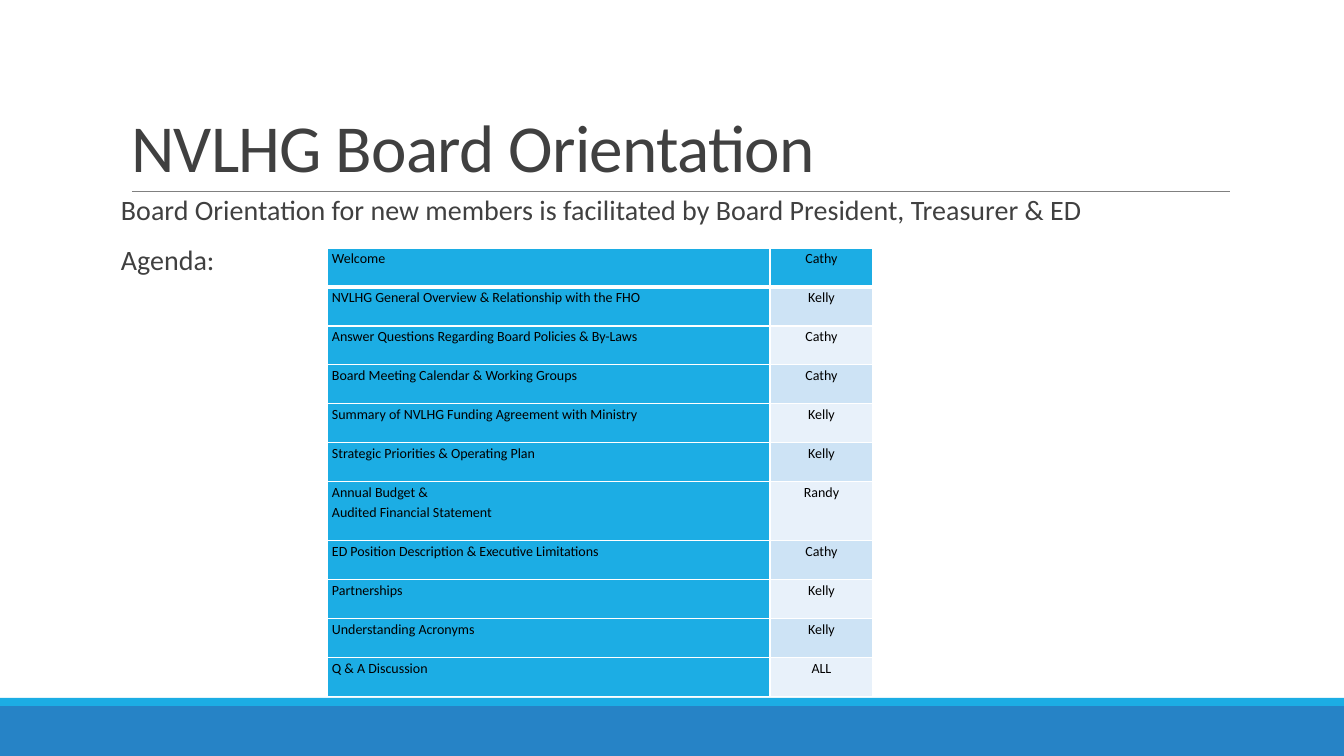
import lxml.etree
import pptx
import pptx.dml.color
import pptx.enum.shapes
import pptx.enum.text
import pptx.oxml.ns
import pptx.util

ALIGN = pptx.enum.text.PP_ALIGN
ANCHOR = pptx.enum.text.MSO_ANCHOR
qn = pptx.oxml.ns.qn

EMU_PER_PX = 914400 / 100.8
WIDTH, HEIGHT = 1344, 756
BRIGHT_BLUE, GREY_TEXT = "1CADE4", "404040"


def px(*lengths):
    """Turn pixel lengths into a list of EMU lengths."""
    return [pptx.util.Emu(round(length * EMU_PER_PX)) for length in lengths]


def color(hex_code):
    return pptx.dml.color.RGBColor.from_string(hex_code)


deck = pptx.Presentation()
deck.slide_width, deck.slide_height = px(WIDTH, HEIGHT)
slide = deck.slides.add_slide(deck.slide_layouts[1])

# Footer bands and the rule under the title
for top, height, fill in [(706, 50, "2683C6"), (698, 8, BRIGHT_BLUE)]:
    band = slide.shapes.add_shape(
        pptx.enum.shapes.MSO_SHAPE.RECTANGLE, *px(0, top, WIDTH, height))
    band.shadow.inherit = False
    band.fill.solid()
    band.fill.fore_color.rgb = color(fill)
    band.line.fill.background()

title_rule = slide.shapes.add_connector(
    pptx.enum.shapes.MSO_CONNECTOR.STRAIGHT, *px(132, 191, 1230, 191))
title_rule.line.color.rgb = color("808080")
title_rule.line.width = pptx.util.Pt(0.5)
lxml.etree.SubElement(title_rule._element.spPr, qn("a:effectLst"))

# Title and introduction
title, intro = slide.shapes.title, slide.placeholders[1]
placeholders = [
    (title, (121, 31, 1109, 160), ["NVLHG Board Orientation"], 48,
     {"vertical_anchor": ANCHOR.BOTTOM},
     {"line_spacing": 0.85}),
    (intro, (121, 191, 1109, 497),
     ["Board Orientation for new members is facilitated by Board President, Treasurer & ED",
      "Agenda:"], 20,
     {"vertical_anchor": ANCHOR.TOP, "margin_left": 0, "margin_right": 0},
     {"line_spacing": 0.9, "space_before": pptx.util.Pt(12),
      "space_after": pptx.util.Pt(2)}),
]
for placeholder, box, lines, size, frame_format, paragraph_format in placeholders:
    placeholder.left, placeholder.top, placeholder.width, placeholder.height = px(*box)
    frame = placeholder.text_frame
    frame.text = "\n".join(lines)
    frame.word_wrap = True
    frame.auto_size = pptx.enum.text.MSO_AUTO_SIZE.NONE
    for attribute, value in frame_format.items():
        setattr(frame, attribute, value)
    for paragraph in frame.paragraphs:
        paragraph.alignment = ALIGN.LEFT
        for attribute, value in paragraph_format.items():
            setattr(paragraph, attribute, value)
        font = paragraph.runs[0].font
        font.name, font.size = "Calibri", pptx.util.Pt(size)
        font.color.rgb = color(GREY_TEXT)

title.text_frame.paragraphs[0].runs[0].font._element.set("spc", "-50")
for paragraph in intro.text_frame.paragraphs:
    properties = paragraph._p.get_or_add_pPr()
    properties.set("marL", "0")
    properties.set("indent", "0")
    lxml.etree.SubElement(properties, qn("a:buNone"))

# Agenda table
agenda = [
    ("Welcome", "Cathy"),
    ("NVLHG General Overview & Relationship with the FHO", "Kelly"),
    ("Answer Questions Regarding Board Policies & By-Laws", "Cathy"),
    ("Board Meeting Calendar & Working Groups", "Cathy"),
    ("Summary of NVLHG Funding Agreement with Ministry", "Kelly"),
    ("Strategic Priorities & Operating Plan", "Kelly"),
    ("Annual Budget &\nAudited Financial Statement", "Randy"),
    ("ED Position Description & Executive Limitations", "Cathy"),
    ("Partnerships", "Kelly"),
    ("Understanding Acronyms", "Kelly"),
    ("Q & A Discussion", "ALL"),
]
row_heights = [39 + 20 * topic.count("\n") for topic, _ in agenda]
column_widths = [443, 103]
table = slide.shapes.add_table(
    len(agenda), 2, *px(327, 248, sum(column_widths), sum(row_heights))).table
table.first_row = table.horz_banding = False
for column, width in zip(table.columns, px(*column_widths)):
    column.width = width
for row, height in zip(table.rows, px(*row_heights)):
    row.height = height

margin_side, = px(5)
cell_format = {"margin_left": margin_side, "margin_right": margin_side,
               "margin_top": 0, "margin_bottom": 0, "vertical_anchor": ANCHOR.TOP}
for row, entry in enumerate(agenda):
    presenter_fill = BRIGHT_BLUE if row == 0 else ("E8F1FA", "CDE3F5")[row % 2]
    styles = [(BRIGHT_BLUE, ALIGN.LEFT), (presenter_fill, ALIGN.CENTER)]
    for column, (text, (fill, alignment)) in enumerate(zip(entry, styles)):
        cell = table.cell(row, column)
        cell.text = text
        for attribute, value in cell_format.items():
            setattr(cell, attribute, value)
        cell.fill.solid()
        cell.fill.fore_color.rgb = color(fill)
        for paragraph in cell.text_frame.paragraphs:
            paragraph.alignment, paragraph.line_spacing = alignment, 1.15
            font = paragraph.runs[0].font
            font.name, font.size = "Calibri", pptx.util.Pt(10)
            font.color.rgb = color("000000")
        border_points = {"lnL": 1, "lnR": 1, "lnT": 3 if row == 1 else 1,
                         "lnB": 3 if row == 0 else 1}
        for position, (side, points) in enumerate(border_points.items()):
            border = lxml.etree.Element(qn("a:" + side), w=str(pptx.util.Pt(points)))
            border_fill = lxml.etree.SubElement(border, qn("a:solidFill"))
            lxml.etree.SubElement(border_fill, qn("a:srgbClr"), val="FFFFFF")
            cell._tc.tcPr.insert(position, border)

deck.save("out.pptx")
